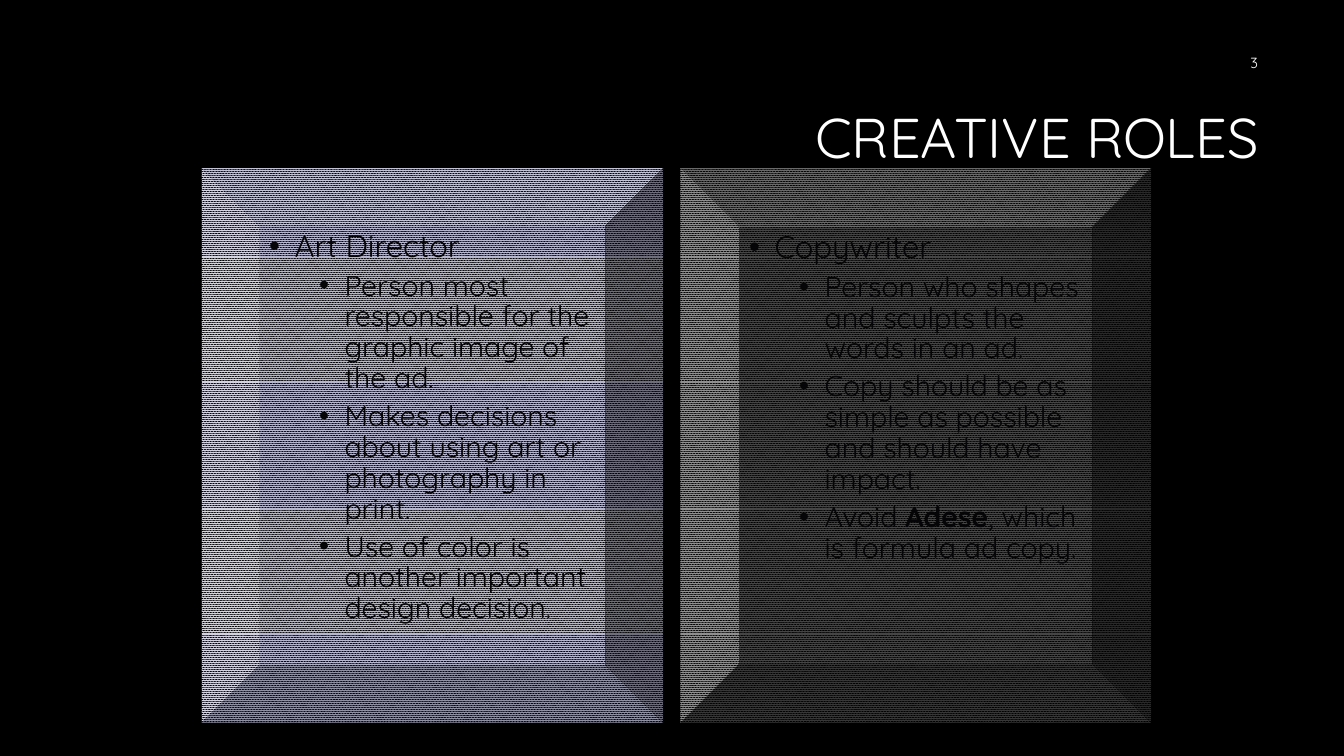
from dataclasses import dataclass

from lxml.etree import SubElement
from pptx import Presentation
from pptx.dml.color import RGBColor
from pptx.enum.dml import MSO_PATTERN
from pptx.enum.shapes import MSO_SHAPE
from pptx.enum.text import MSO_ANCHOR, MSO_AUTO_SIZE, PP_ALIGN
from pptx.oxml.ns import qn
from pptx.util import Cm, Pt


@dataclass(frozen=True)
class Theme:
    font: str = "Quicksand"
    black: str = "000000"
    white: str = "FFFFFF"
    ink: str = "050507"
    lavender: str = "B6B6CE"
    charcoal: str = "454545"
    title: float = 40
    role: float = 22.2
    duty: float = 20.4
    number: float = 10.5


THEME = Theme()

# Each role: name, then its duties as lists of (text, bold) runs
ART_DIRECTOR = ("Art Director", [
    [("Person most responsible for the graphic image of the ad.", False)],
    [("Makes decisions about using art or photography in print.", False)],
    [("Use of color is another important design decision.", False)],
])
COPYWRITER = ("Copywriter", [
    [("Person who shapes and sculpts the words in an ad.", False)],
    [("Copy should be as simple as possible and should have impact.", False)],
    [("Avoid ", False), ("Adese", True), (", which is formula ad copy.", False)],
])


def rgb(value):
    return RGBColor.from_string(value)


def write(p, text, size, color, bold=False, align=PP_ALIGN.LEFT, spacing=0.9):
    """Add one formatted run to a paragraph."""
    p.alignment = align
    p.line_spacing = spacing
    r = p.add_run()
    r.text = text
    r.font.name = THEME.font
    r.font.size = Pt(size)
    r.font.bold = bold
    r.font.color.rgb = rgb(color)


def add_bullet(p, level, indent):
    """Give a paragraph a hanging round bullet."""
    p.level = level
    pPr = p._p.get_or_add_pPr()
    pPr.set("marL", str(int(indent)))
    pPr.set("indent", str(-int(Cm(0.64))))
    SubElement(pPr, qn("a:buFont")).set("typeface", "Arial")
    SubElement(pPr, qn("a:buChar")).set("char", "•")


def place(sp, left, top, width, height):
    sp.left, sp.top, sp.width, sp.height = left, top, width, height


def add_title(s, text):
    sp = s.shapes.title
    place(sp, Cm(8.05), Cm(1.75), Cm(23.93), Cm(3.58))
    tf = sp.text_frame
    tf.auto_size = MSO_AUTO_SIZE.NONE
    tf.vertical_anchor = MSO_ANCHOR.MIDDLE
    write(tf.paragraphs[0], text, THEME.title, THEME.white, align=PP_ALIGN.RIGHT)


def add_number(s, text):
    sp = s.shapes.add_textbox(Cm(24.33), Cm(1.07), Cm(7.62), Cm(1.02))
    tf = sp.text_frame
    tf.word_wrap = True
    tf.vertical_anchor = MSO_ANCHOR.MIDDLE
    write(tf.paragraphs[0], text, THEME.number, THEME.white,
          align=PP_ALIGN.RIGHT, spacing=1.0)


def add_role_panel(s, left, width, color, role):
    """Draw a patterned bevel that holds a role and its duties."""
    sp = s.shapes.add_shape(MSO_SHAPE.BEVEL, left, Cm(4.24), width, Cm(13.97))
    sp.shadow.inherit = False
    sp.line.fill.background()
    sp.fill.patterned()
    sp.fill.pattern = MSO_PATTERN.PERCENT_90
    sp.fill.fore_color.rgb = rgb(color)
    sp.fill.back_color.rgb = rgb(THEME.black)

    tf = sp.text_frame
    tf.word_wrap = True
    tf.vertical_anchor = MSO_ANCHOR.TOP
    name, duties = role
    p = tf.paragraphs[0]
    add_bullet(p, 0, Cm(0.64))
    write(p, name, THEME.role, THEME.ink)
    for duty in duties:
        p = tf.add_paragraph()
        add_bullet(p, 1, Cm(1.9))
        p.space_before = Pt(5)
        for text, bold in duty:
            write(p, text, THEME.duty, THEME.ink, bold=bold)


def main():
    prs = Presentation()
    prs.slide_width, prs.slide_height = Cm(33.87), Cm(19.05)
    s = prs.slides.add_slide(prs.slide_layouts[5])
    s.background.fill.solid()
    s.background.fill.fore_color.rgb = rgb(THEME.black)

    # Heading
    add_title(s, "CREATIVE ROLES")

    # Role panels
    add_role_panel(s, Cm(5.08), Cm(11.63), THEME.lavender, ART_DIRECTOR)
    add_role_panel(s, Cm(17.15), Cm(11.86), THEME.charcoal, COPYWRITER)

    # Slide number
    add_number(s, "3")
    prs.save("out.pptx")


if __name__ == "__main__":
    main()
